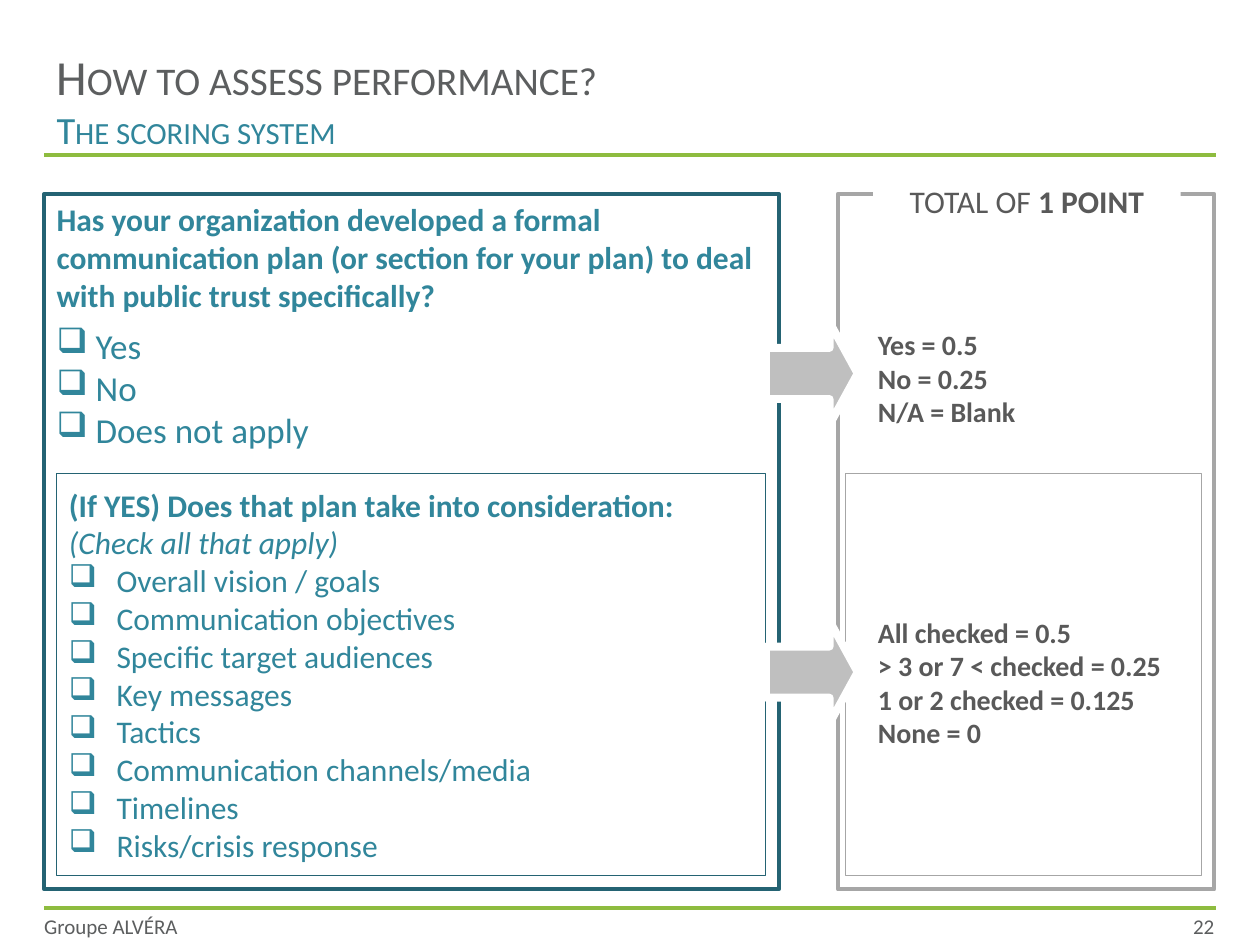
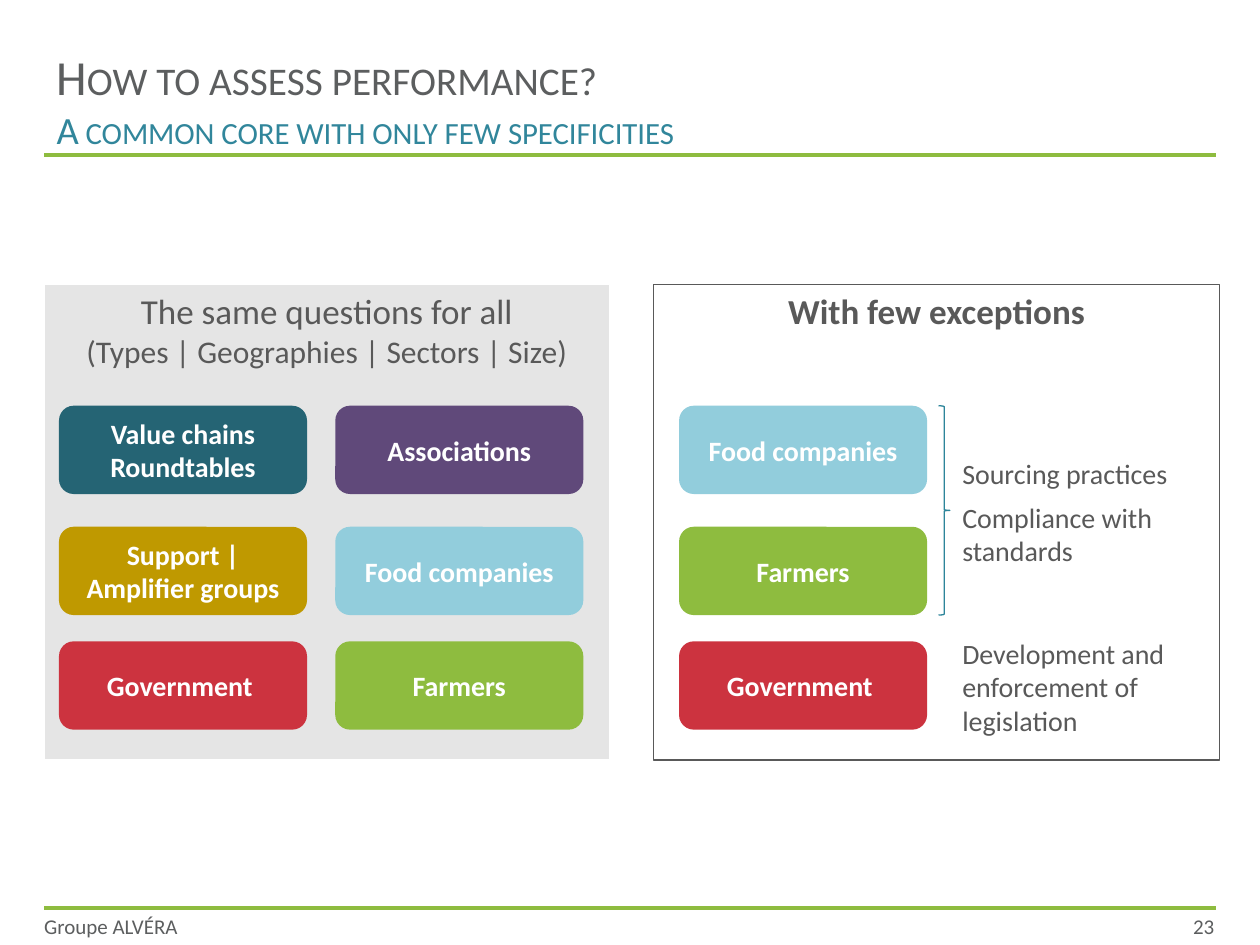
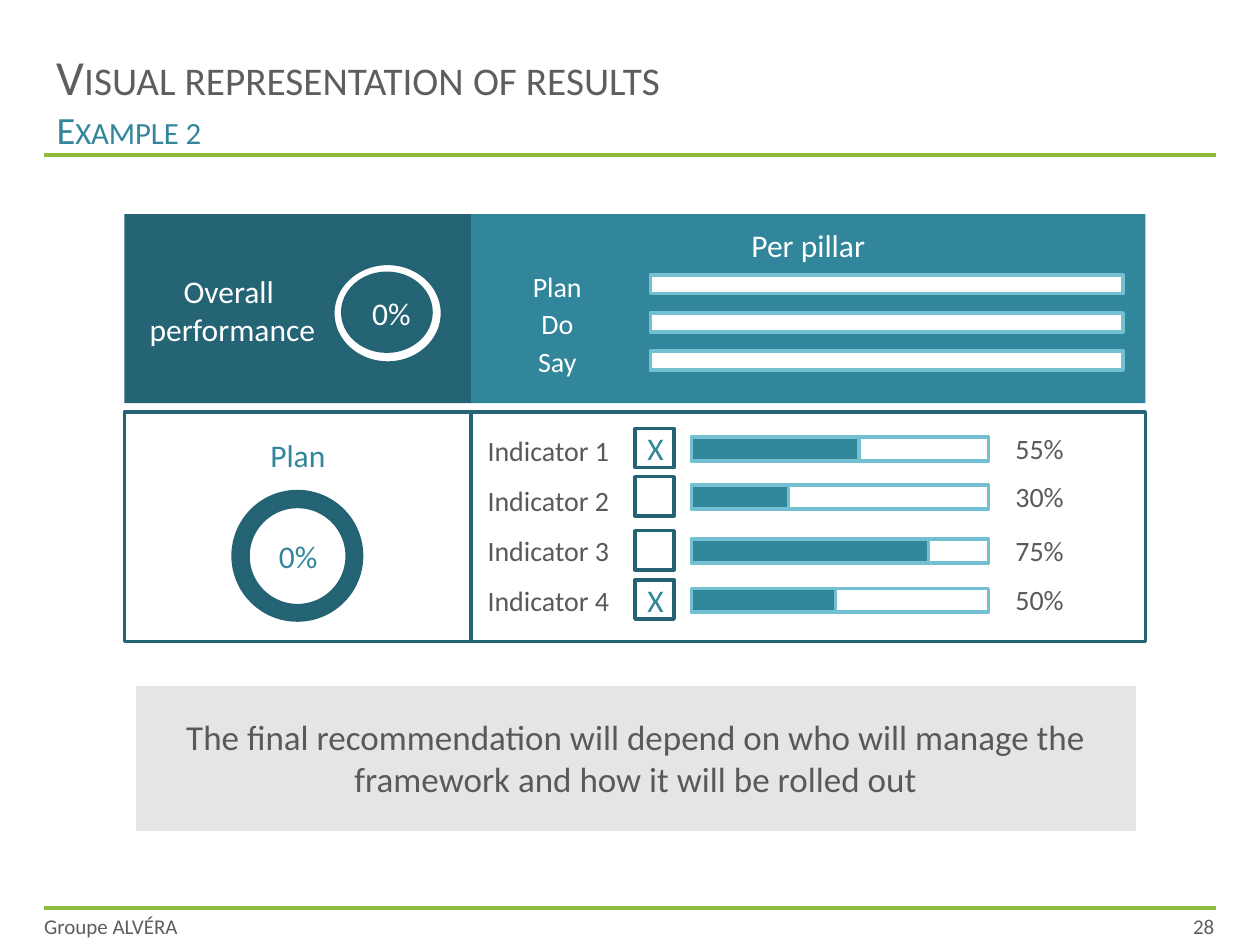
from dataclasses import dataclass
from typing import NamedTuple, Optional

from lxml.etree import SubElement
from pptx import Presentation
from pptx.dml.color import RGBColor
from pptx.enum.shapes import MSO_CONNECTOR, MSO_SHAPE
from pptx.enum.text import MSO_ANCHOR, PP_ALIGN
from pptx.oxml.ns import qn
from pptx.util import Cm, Pt

# Shared look
COLORS = {
    "title": "5C5E5F", "text": "595959", "teal": "31869B", "deep": "256474",
    "edge": "246373", "rule": "8EBC3F", "white": "FFFFFF", "grey": "A6A6A6",
    "arrow": "BFBFBF", "panel": "D9D9D9", "purple": "60497A", "gold": "BF9900",
    "sky": "92CDDC", "green": "8EBC3F", "red": "CC333F", "brace": "2D859A",
    "bar": "73C0D3",
}
FONT = "Calibri"
FOOTER = "Groupe ALVÉRA"
LEFT, CENTER, RIGHT = PP_ALIGN.LEFT, PP_ALIGN.CENTER, PP_ALIGN.RIGHT
TOP, MIDDLE = MSO_ANCHOR.TOP, MSO_ANCHOR.MIDDLE
RECT, ROUND = MSO_SHAPE.RECTANGLE, MSO_SHAPE.ROUNDED_RECTANGLE
CIRCLE = MSO_SHAPE.FLOWCHART_CONNECTOR
INSETS = (0.25, 0.13, 0.25, 0.13)
PANEL_INSETS = (0.25, 0.1, 0.25, 0.13)
NO_INSETS = (0, 0, 0, 0)
RULE_LEFT, RULE_RIGHT = 0.89, 24.51
HEADER_Y, FOOTER_Y = 3.12, 18.31


class Box(NamedTuple):
    """Place and size in centimetres."""
    left: float
    top: float
    width: float
    height: float


class Run(NamedTuple):
    text: str
    size: float = 16
    color: str = "text"
    bold: bool = False
    italic: bool = False
    small_caps: bool = False


@dataclass(frozen=True)
class Para:
    runs: tuple[Run, ...]
    align: PP_ALIGN = LEFT
    before: float = 0
    after: float = 0
    hanging: float = 0


@dataclass(frozen=True)
class Part:
    """A shape, or a plain text box when kind is None."""
    box: Box
    kind: Optional[MSO_SHAPE] = None
    fill: Optional[str] = None
    line: Optional[str] = None
    weight: float = 2
    opacity: int = 100
    adjust: tuple[float, ...] = ()
    paras: tuple[Para, ...] = ()
    anchor: MSO_ANCHOR = TOP
    insets: tuple[float, ...] = INSETS
    wrap: bool = True


def rgb(name: str) -> RGBColor:
    return RGBColor.from_string(COLORS[name])


def set_all(target, values: dict) -> None:
    for name, value in values.items():
        setattr(target, name, value)


def lines(*texts: str, align: PP_ALIGN = LEFT, before: float = 0,
          after: float = 0, hanging: float = 0, **style) -> tuple[Para, ...]:
    """One paragraph per text, all in the same style."""
    return tuple(Para((Run(text, **style),), align, before, after, hanging)
                 for text in texts)


def add_bullet(paragraph, hanging: float) -> None:
    props = paragraph._p.get_or_add_pPr()
    props.set("marL", str(Cm(hanging)))
    props.set("indent", str(-Cm(hanging)))
    color = SubElement(props, qn("a:buClr"))
    SubElement(color, qn("a:srgbClr"), val=COLORS["teal"])
    SubElement(props, qn("a:buChar"), char="❑")


def write(frame, part: Part) -> None:
    left, top, right, bottom = map(Cm, part.insets)
    set_all(frame, {"margin_left": left, "margin_top": top,
                    "margin_right": right, "margin_bottom": bottom,
                    "word_wrap": part.wrap, "vertical_anchor": part.anchor})
    for index, para in enumerate(part.paras):
        paragraph = frame.add_paragraph() if index else frame.paragraphs[0]
        set_all(paragraph, {"alignment": para.align,
                            "space_before": Pt(para.before),
                            "space_after": Pt(para.after)})
        if para.hanging:
            add_bullet(paragraph, para.hanging)
        for item in para.runs:
            run = paragraph.add_run()
            run.text = item.text
            set_all(run.font, {"name": FONT, "size": Pt(item.size),
                               "bold": item.bold, "italic": item.italic})
            run.font.color.rgb = rgb(item.color)
            if item.small_caps:
                run._r.get_or_add_rPr().set("cap", "small")


def paint(shape, part: Part) -> None:
    shape.shadow.inherit = False
    if part.fill:
        shape.fill.solid()
        shape.fill.fore_color.rgb = rgb(part.fill)
        if part.opacity < 100:
            color = shape._element.spPr.find(qn("a:solidFill"))[0]
            SubElement(color, qn("a:alpha"), val=str(part.opacity * 1000))
    else:
        shape.fill.background()
    if part.line:
        shape.line.color.rgb = rgb(part.line)
        shape.line.width = Pt(part.weight)
    else:
        shape.line.fill.background()
    for index, value in enumerate(part.adjust):
        shape.adjustments[index] = value


def draw(slide, *parts: Part) -> None:
    for part in parts:
        place = map(Cm, part.box)
        if part.kind is None:
            shape = slide.shapes.add_textbox(*place)
        else:
            shape = slide.shapes.add_shape(part.kind, *place)
            paint(shape, part)
        if part.paras:
            write(shape.text_frame, part)


def add_rule(slide, y: float) -> None:
    rule = slide.shapes.add_connector(MSO_CONNECTOR.STRAIGHT, Cm(RULE_LEFT),
                                      Cm(y), Cm(RULE_RIGHT), Cm(y))
    rule.line.color.rgb = rgb("rule")
    rule.line.width = Pt(2.25)
    SubElement(rule._element.spPr, qn("a:effectLst"))


def start_slide(deck, title: str, subtitle: str, number: int):
    """Blank slide with the shared title, rules and footer."""
    slide = deck.slides.add_slide(deck.slide_layouts[6])
    for y in (HEADER_Y, FOOTER_Y):
        add_rule(slide, y)
    footer = {"size": 12, "color": "title"}
    draw(slide,
         Part(Box(20.29, FOOTER_Y, 4.19, 0.71), anchor=MIDDLE, insets=NO_INSETS,
              paras=lines(str(number), align=RIGHT, **footer)),
         Part(Box(RULE_LEFT, FOOTER_Y, 4.6, 0.71), anchor=MIDDLE,
              insets=NO_INSETS, paras=lines(FOOTER, **footer)),
         Part(Box(RULE_LEFT, 0.76, 23.6, 2.49), anchor=MIDDLE,
              paras=lines(title, size=28, color="title", small_caps=True)
              + lines(subtitle, size=22, color="teal", small_caps=True)))
    return slide


def panel(box: Box, paras: tuple[Para, ...], fill: str = "panel",
          line: str = "white", anchor: MSO_ANCHOR = TOP) -> Part:
    return Part(box, RECT, fill, line, 0.75, 68, paras=paras, anchor=anchor,
                insets=PANEL_INSETS)


# Slide: scoring system
def scoring_slide(deck) -> None:
    slide = start_slide(deck, "How to assess performance?",
                        "The scoring system", 22)
    frame_top, frame_height = 3.91, 14.02
    detail_top, detail_height = 9.55, 8.1
    question = lines(
        "Has your organization developed a formal communication plan (or "
        "section for your plan) to deal with public trust specifically?",
        size=18, color="teal", bold=True, after=6)
    choices = lines("Yes", "No", "Does not apply", size=20, color="teal",
                    hanging=0.79)
    follow_up = Para((
        Run("(If YES) Does that plan take into consideration: ", 18, "teal", True),
        Run("(Check all that apply)", 18, "teal", italic=True)))
    topics = lines("Overall vision / goals", "Communication objectives",
                   "Specific target audiences", "Key messages", "Tactics",
                   "Communication channels/media", "Timelines",
                   "Risks/crisis response", size=18, color="teal", hanging=0.96)
    total = Para((Run("TOTAL OF ", 18), Run("1 POINT", 18, bold=True)), CENTER)
    arrows = [Part(Box(15.44, top, 1.85, 2.06), MSO_SHAPE.RIGHT_ARROW, "arrow",
                   "white", 4.5, adjust=(0.5, 0.305)) for top in (6.5, 12.52)]
    draw(slide,
         Part(Box(RULE_LEFT, frame_top, 14.81, frame_height), RECT, None,
              "edge", 2.25, paras=question + choices),
         Part(Box(1.14, detail_top, 14.3, detail_height), RECT, "white", "edge",
              0.5, paras=(follow_up, *topics), anchor=MIDDLE),
         Part(Box(17.45, 6.48, 3.61, 2.31), RECT, "white",
              paras=lines("Yes = 0.5", "No = 0.25", "N/A = Blank", bold=True)),
         Part(Box(16.89, frame_top, 7.59, frame_height), RECT, None, "grey", 2.25),
         Part(Box(17.04, detail_top, 7.19, detail_height), RECT, "white",
              "grey", 0.5),
         Part(Box(17.45, 12.27, 6.45, 3), RECT, "white",
              paras=lines("All checked = 0.5", "˃ 3 or 7 ˂ checked = 0.25",
                          "1 or 2 checked = 0.125", "None = 0", bold=True)),
         Part(Box(17.6, 3.53, 6.2, 1.02), RECT, "white", paras=(total,)),
         *arrows)


# Slide: common core
def common_core_slide(deck) -> None:
    slide = start_slide(deck, "How to assess performance?",
                        "A common core with only few specificities", 23)
    panel_top, panel_width, panel_height = 5.74, 11.4, 9.58
    group_rows = (8.18, 10.62, 12.93)
    food, farmers = ("Food companies", "sky"), ("Farmers", "green")
    government = ("Government ", "red")
    columns = {
        1.19: (("Value chains Roundtables", "deep"),
               ("Support | Amplifier groups", "gold"), government),
        6.76: (("Associations", "purple"), food, farmers),
        13.69: (food, farmers, government),
    }
    draw(slide,
         panel(Box(RULE_LEFT, panel_top, panel_width, panel_height),
               lines("The same questions for all", size=20, align=CENTER)
               + lines("(Types | Geographies | Sectors | Size)", size=18,
                       align=CENTER)),
         panel(Box(13.18, panel_top, panel_width, panel_height),
               lines("With few exceptions", size=20, bold=True, align=CENTER),
               "white", "text"))
    for left, groups in columns.items():
        for top, (label, fill) in zip(group_rows, groups):
            draw(slide, Part(Box(left, top, 5, 1.78), ROUND, fill, anchor=MIDDLE,
                             paras=lines(label, color="white", bold=True,
                                         align=CENTER)))
    spacing = {"before": 3, "after": 3}
    draw(slide,
         Part(Box(19.15, 9.07, 5.21, 2.51),
              paras=lines("Sourcing practices", "Compliance with standards",
                          **spacing)),
         Part(Box(19.15, 12.7, 5.21, 2.31),
              paras=lines("Development and enforcement of legislation",
                          **spacing)),
         Part(Box(18.92, 8.18, 0.23, 4.22), MSO_SHAPE.RIGHT_BRACE, None,
              "brace", 0.75))


class Indicator(NamedTuple):
    score: str
    filled: float
    checked: bool
    bar_top: float


INDICATORS = (
    Indicator("55%", 3.38, True, 8.81),
    Indicator("30%", 1.96, False, 9.78),
    Indicator("75%", 4.78, False, 10.87),
    Indicator("50%", 2.9, True, 11.86),
)


def ring(outer: Box, inner: Box, band: str, core: str) -> list[Part]:
    return [Part(outer, CIRCLE, band, "edge"), Part(inner, CIRCLE, core, "edge")]


def bar(left: float, top: float, width: float, height: float,
        fill: str = "white") -> Part:
    return Part(Box(left, top, width, height), RECT, fill, "bar")


# Slide: results dashboard
def results_slide(deck) -> None:
    slide = start_slide(deck, "Visual representation of results", "Example 2", 28)
    left, split, left_width, right_width = 2.51, 9.5, 7.01, 13.59
    upper, upper_height, lower, lower_height = 4.32, 3.81, 8.31, 4.62
    light = {"size": 18, "color": "white", "align": CENTER}
    teal = {"size": 18, "color": "teal", "align": CENTER}

    # Overall performance and plan
    draw(slide,
         Part(Box(left, upper, left_width, upper_height), RECT, "deep"),
         Part(Box(split, upper, right_width, upper_height), RECT, "teal"),
         Part(Box(left, lower, left_width, lower_height), RECT, "white", "deep"),
         *ring(Box(6.71, 5.31, 2.21, 2.01), Box(6.91, 5.51, 1.78, 1.57),
               "white", "deep"),
         Part(Box(2.74, 5.36, 3.89, 1.8), wrap=False,
              paras=lines("Overall ", "performance", **light)),
         Part(Box(7.24, 5.79, 1.3, 1.02), wrap=False, paras=lines("0%", **light)),
         Part(Box(split, 4.42, right_width, 1.02),
              paras=lines("Per pillar", **light)),
         Part(Box(left, 8.66, 6.99, 1.02), paras=lines("Plan", **teal)),
         *ring(Box(4.7, 9.91, 2.59, 2.59), Box(5, 10.21, 2, 2), "deep", "white"),
         Part(Box(5.36, 10.69, 1.3, 1.02), wrap=False, paras=lines("0%", **teal)),
         Part(Box(split, lower, right_width, lower_height), RECT, "white", "deep"))

    # Pillars
    for row, pillar in enumerate(("Plan", "Do", "Say")):
        draw(slide, bar(13.11, 5.54 + 0.77 * row, 9.53, 0.38),
             Part(Box(9.37, 5.31 + 0.75 * row, 3.73, 0.94),
                  paras=lines(pillar, color="white", align=CENTER)))

    # Indicators
    for row, item in enumerate(INDICATORS):
        mark = lines("X", **teal) if item.checked else ()
        draw(slide,
             Part(Box(9.58, 8.61 + 1.01 * row, 3.73, 0.94),
                  paras=lines(f"Indicator {row + 1}")),
             Part(Box(12.8, item.bar_top - 0.17, 0.79, 0.79), RECT, "white",
                  "edge", paras=mark, anchor=MIDDLE),
             bar(13.94, item.bar_top, 5.99, 0.48),
             bar(13.94, item.bar_top, item.filled, 0.48, "teal"),
             Part(Box(20.22, item.bar_top - 0.25, 1.78, 0.94),
                  paras=lines(item.score)))

    # Recommendation
    draw(slide, panel(
        Box(2.72, 13.82, 20.19, 2.95),
        lines("The final recommendation will depend on who will manage the "
              "framework and how it will be rolled out", size=20, align=CENTER),
        anchor=MIDDLE))


def main() -> None:
    deck = Presentation()
    set_all(deck, {"slide_width": Cm(25.4), "slide_height": Cm(19.05)})
    scoring_slide(deck)
    common_core_slide(deck)
    results_slide(deck)
    deck.save("out.pptx")


if __name__ == "__main__":
    main()
